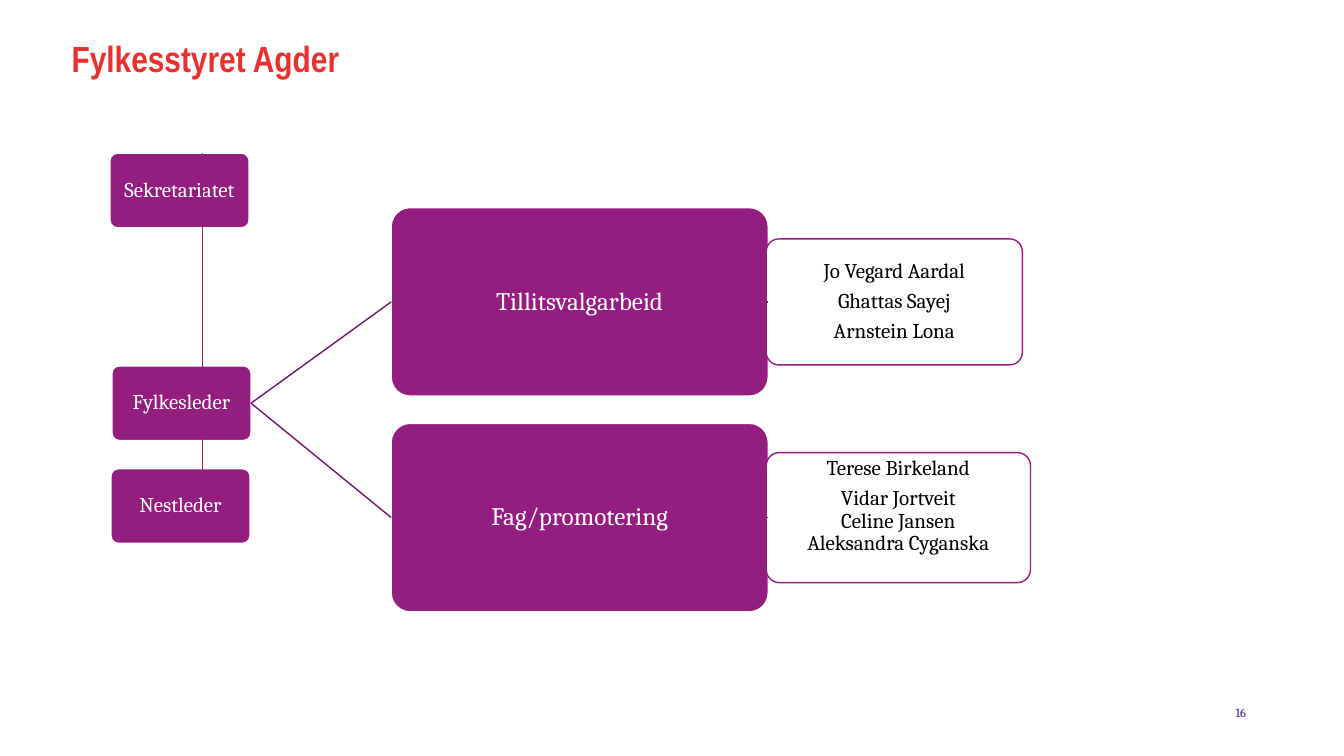
from copy import deepcopy
from dataclasses import dataclass

from pptx import Presentation
from pptx.dml.color import RGBColor
from pptx.enum.shapes import MSO_CONNECTOR, MSO_SHAPE
from pptx.enum.text import MSO_ANCHOR, PP_ALIGN
from pptx.oxml.ns import qn
from pptx.util import Emu, Pt
from lxml import etree

ROUNDED = MSO_SHAPE.ROUNDED_RECTANGLE
STRAIGHT = MSO_CONNECTOR.STRAIGHT
TOP, MIDDLE = MSO_ANCHOR.TOP, MSO_ANCHOR.MIDDLE
LEFT, CENTER, RIGHT = PP_ALIGN.LEFT, PP_ALIGN.CENTER, PP_ALIGN.RIGHT
LEFT_SIDE, RIGHT_SIDE = 1, 3


@dataclass(frozen=True)
class Theme:
    heading_font: str = "Arial Narrow"
    body_font: str = "Cambria"
    red: str = "E73130"
    purple: str = "941D80"
    dark_purple: str = "771767"
    violet: str = "3F1F71"
    white: str = "FFFFFF"
    black: str = "000000"
    title_size: int = 26
    group_size: int = 18
    name_size: int = 15
    number_size: int = 9


THEME = Theme()

# Groups of the board; \v breaks a line inside a paragraph
GROUPS = [
    # name, top, members, members' width, height, anchor
    ("Tillitsvalgarbeid", 54,
     "Jo Vegard Aardal\nGhattas Sayej\nArnstein Lona", 254, 125, MIDDLE),
    ("Fag/promotering", 268,
     "Terese Birkeland\nVidar Jortveit\vCeline Jansen\vAleksandra Cyganska",
     262, 129, TOP),
]


def px(n):
    """Lengths are in px, 100 to the inch."""
    return Emu(n * 9144)


def rgb(color):
    return RGBColor.from_string(color)


def write(shape, text, size, color, font, align, anchor, inset=0, bold=False):
    tf = shape.text_frame
    tf.word_wrap = True
    tf.vertical_anchor = anchor
    tf.margin_left = tf.margin_right = px(inset)
    tf.margin_top = tf.margin_bottom = px(inset)
    tf.text = text
    for p in tf.paragraphs:
        p.alignment = align
        for r in p.runs:
            r.font.name = font
            r.font.size = Pt(size)
            r.font.bold = bold
            r.font.color.rgb = rgb(color)
        # Line breaks take the size of the text around them
        for br in p._p.findall(qn("a:br")):
            br.insert(0, deepcopy(p.runs[0]._r.rPr))
    return tf


def add_card(s, box, text, size, fill, line, color, anchor=MIDDLE):
    card = s.shapes.add_shape(ROUNDED, *map(px, box))
    card.shadow.inherit = False
    card.adjustments[0] = 0.1
    card.fill.solid()
    card.fill.fore_color.rgb = rgb(fill)
    card.line.color.rgb = rgb(line)
    card.line.width = Pt(1)
    tf = write(card, text, size, color, THEME.body_font, CENTER, anchor, 1)
    for p in tf.paragraphs:
        p.line_spacing = 0.9
        p.space_after = Pt(0.35 * size)
    return card


def add_line(s, start, end, color, width):
    line = s.shapes.add_connector(STRAIGHT, *map(px, start + end))
    line.line.color.rgb = rgb(color)
    line.line.width = Pt(width)
    etree.SubElement(line._element.spPr, qn("a:effectLst"))
    return line


def join(s, a, b):
    line = add_line(s, (0, 0), (0, 0), THEME.dark_purple, 1)
    line.begin_connect(a, RIGHT_SIDE)
    line.end_connect(b, LEFT_SIDE)


def add_title(s, box):
    title = s.shapes.add_textbox(*map(px, box))
    tf = write(title, "Fylkesstyret Agder", THEME.title_size, THEME.red,
               THEME.heading_font, LEFT, TOP, bold=True)
    tf.paragraphs[0].line_spacing = Pt(29)


def add_slide_number(s, box):
    number = s.shapes.add_textbox(*map(px, box))
    write(number, "16", THEME.number_size, THEME.violet,
          THEME.body_font, RIGHT, MIDDLE)


def add_officers(s, x, y):
    """Leadership column; returns the leader's card."""
    cards = {}
    for name, dx, dy in [("Fylkesleder", 2, 211), ("Nestleder", 1, 313),
                         ("Sekretariatet", 0, 0)]:
        cards[name] = add_card(s, (x + dx, y + dy, 138, 74), name,
                               THEME.name_size, THEME.purple, THEME.white,
                               THEME.white)
    # Vertical lines between the cards
    for top, bottom in [(0, 226), (275, 323)]:
        add_line(s, (x + 92, y + top), (x + 92, y + bottom), THEME.purple, 0.5)
    return cards["Fylkesleder"]


def add_groups(s, x, y, leader):
    """Working groups with their members to the right."""
    width, height = 374, 187
    for name, dy, members, w, h, anchor in GROUPS:
        group = add_card(s, (x, y + dy, width, height), name,
                         THEME.group_size, THEME.purple, THEME.white,
                         THEME.white)
        box = (x + width - 2, y + dy + (height - h) // 2, w, h)
        people = add_card(s, box, members, THEME.name_size, THEME.white,
                          THEME.purple, THEME.black, anchor)
        join(s, leader, group)
        join(s, group, people)


def add_board_chart(s, x, y):
    leader = add_officers(s, x, y)
    add_groups(s, x + 279, y, leader)


def main():
    prs = Presentation()
    prs.slide_width, prs.slide_height = px(1333), px(750)
    s = prs.slides.add_slide(prs.slide_layouts[6])
    add_title(s, (71, 39, 863, 81))
    add_board_chart(s, 109, 152)
    add_slide_number(s, (936, 699, 300, 15))
    prs.save("out.pptx")


if __name__ == "__main__":
    main()
